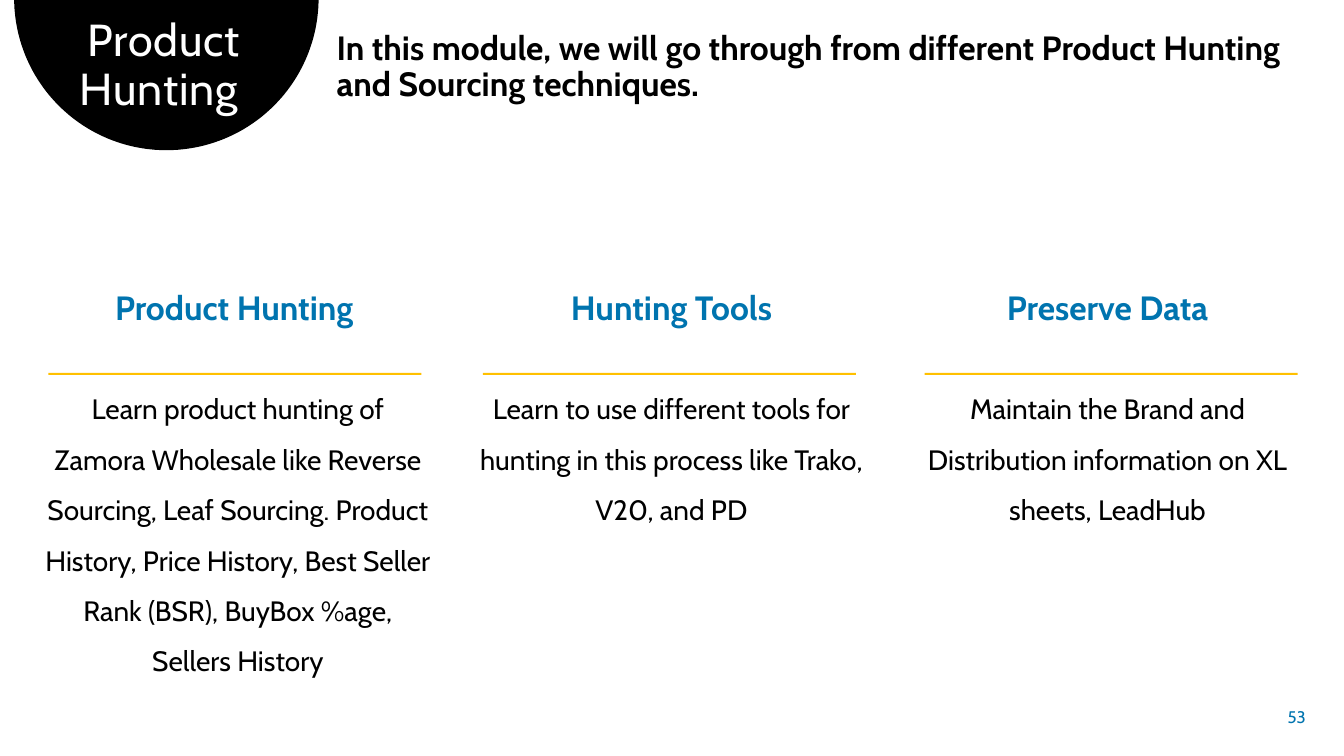
"""Build the product hunting module slide."""
from dataclasses import dataclass
from math import cos, pi, sin

from pptx import Presentation
from pptx.dml.color import RGBColor
from pptx.enum.shapes import MSO_SHAPE
from pptx.enum.text import MSO_ANCHOR, PP_ALIGN
from pptx.slide import Slide
from pptx.text.text import TextFrame
from pptx.util import Inches, Pt

RECT = MSO_SHAPE.RECTANGLE
TOP, MIDDLE = MSO_ANCHOR.TOP, MSO_ANCHOR.MIDDLE
LEFT, CENTER, RIGHT = PP_ALIGN.LEFT, PP_ALIGN.CENTER, PP_ALIGN.RIGHT
FONT = "Cabin"
COLORS = {"black": "000000", "white": "FFFFFF", "blue": "0074AF", "gold": "FFC000"}


@dataclass
class Topic:
    left: float
    width: float
    height: float
    rule: float
    head: str
    body: str


TOPICS = [
    Topic(0.33, 4.06, 4.58, 0.48, "Product Hunting ",
          "Learn product hunting of Zamora Wholesale like Reverse Sourcing, "
          "Leaf Sourcing. Product History, Price History, Best Seller Rank (BSR), "
          "BuyBox %age, Sellers History"),
    Topic(4.56, 4.2, 2.39, 4.79, "Hunting Tools",
          "Learn to use different tools for hunting in this process like Trako, "
          "V20, and PD"),
    Topic(8.92, 4.13, 2.39, 9.17, "Preserve Data",
          "Maintain the Brand and Distribution information on XL sheets, LeadHub"),
]


def color(name: str) -> RGBColor:
    return RGBColor.from_string(COLORS[name])


def paint(shape, name: str) -> None:
    shape.shadow.inherit = False
    shape.fill.solid()
    shape.fill.fore_color.rgb = color(name)
    shape.line.fill.background()


def add_box(slide: Slide, left: float, top: float, width: float, height: float,
            anchor=TOP, wrap: bool = True) -> TextFrame:
    box = slide.shapes.add_textbox(
        Inches(left), Inches(top), Inches(width), Inches(height))
    frame = box.text_frame
    frame.word_wrap = wrap
    frame.vertical_anchor = anchor
    return frame


def write(frame: TextFrame, text: str, *, size: float, tint: str = "black",
          bold: bool = False, align=CENTER, lines: float = 0.9,
          before: float = 0, after: float = 0, track: int = 0) -> None:
    para = frame.paragraphs[0] if not frame.text else frame.add_paragraph()
    para.alignment = align
    para.line_spacing = lines
    para.space_before, para.space_after = Pt(before), Pt(after)
    run = para.add_run()
    run.text = text
    run.font.name, run.font.size, run.font.bold = FONT, Pt(size), bold
    run.font.color.rgb = color(tint)
    if track:
        run._r.get_or_add_rPr().set("spc", str(track))


def add_dome(slide: Slide, mid: float, radius: float, drop: float) -> None:
    steps = 120
    points = [(Inches(mid + radius * cos(pi * i / steps)),
               Inches(max(0, radius * sin(pi * i / steps) - drop)))
              for i in range(steps + 1)]
    path = slide.shapes.build_freeform(*points[0])
    path.add_line_segments(points[1:], close=True)
    paint(path.convert_to_shape(), "black")


def add_topic(slide: Slide, topic: Topic) -> None:
    frame = add_box(slide, topic.left, 2.84, topic.width, topic.height)
    write(frame, topic.head, size=24, tint="blue", bold=True, before=10, after=24)
    write(frame, topic.body, size=20, lines=1.5, before=10, after=12)
    rule = slide.shapes.add_shape(
        RECT, Inches(topic.rule), Inches(3.7), Inches(3.7), Inches(0.02))
    paint(rule, "gold")


def main() -> None:
    deck = Presentation()
    deck.slide_width, deck.slide_height = Inches(13.33), Inches(7.5)
    slide = deck.slides.add_slide(deck.slide_layouts[6])
    add_dome(slide, 1.65, 1.51, 0.02)
    for topic in TOPICS:
        add_topic(slide, topic)
    write(add_box(slide, 0.33, 0.13, 2.6, 1.07), "Product Hunting ",
          size=32, tint="white", track=60)
    write(add_box(slide, 3.24, 0.26, 9.93, 0.83),
          "In this module, we will go through from different Product Hunting "
          "and Sourcing techniques.",
          size=24, bold=True, align=LEFT, before=10)
    write(add_box(slide, 12.5, 6.91, 0.55, 0.4, MIDDLE, False), "53",
          size=12, tint="blue", align=RIGHT, lines=1.0)
    deck.save("out.pptx")


if __name__ == "__main__":
    main()
